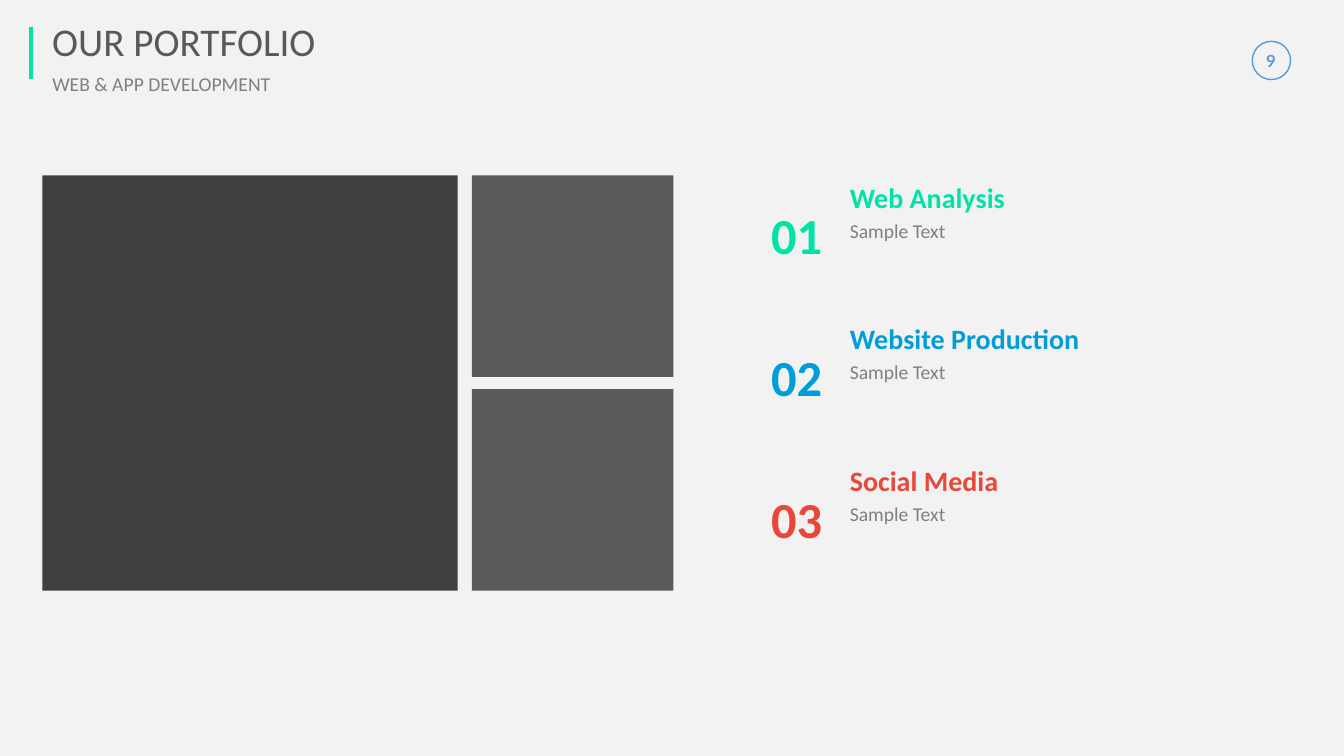
from pptx import Presentation
from pptx.dml.color import RGBColor
from pptx.enum.shapes import MSO_CONNECTOR, MSO_SHAPE
from pptx.enum.text import MSO_AUTO_SIZE, PP_ALIGN
from pptx.oxml.ns import qn
from pptx.util import Inches, Pt

RECT, OVAL = MSO_SHAPE.RECTANGLE, MSO_SHAPE.OVAL
LINE = MSO_CONNECTOR.STRAIGHT
GROW = MSO_AUTO_SIZE.SHAPE_TO_FIT_TEXT
LEFT, MID = PP_ALIGN.LEFT, PP_ALIGN.CENTER

MINT, BLUE, RED, SKY = "00E3A6", "009DD9", "E7483A", "5B9BD5"
PALE, GREY, SLATE, DARK = "F2F2F2", "808080", "595959", "404040"


def paint(code):
    return RGBColor.from_string(code)


class Deck:
    def __init__(self, font="Calibri"):
        self.font = font
        self.prs = Presentation()
        self.prs.slide_width = Inches(13.33)
        self.prs.slide_height = Inches(7.5)
        self.slide = self.prs.slides.add_slide(self.prs.slide_layouts[6])
        back = self.slide.background.fill
        back.solid()
        back.fore_color.rgb = paint(PALE)

    def shape(self, kind, box, fill=None, line=None, width=1):
        item = self.slide.shapes.add_shape(kind, *map(Inches, box))
        item.shadow.inherit = False
        if fill:
            item.fill.solid()
            item.fill.fore_color.rgb = paint(fill)
        else:
            item.fill.background()
        if line:
            item.line.color.rgb = paint(line)
            item.line.width = Pt(width)
        else:
            item.line.fill.background()

    def rule(self, start, end, color, width):
        item = self.slide.shapes.add_connector(
            LINE, *map(Inches, start + end))
        item.line.color.rgb = paint(color)
        item.line.width = Pt(width)
        props = item._element.spPr
        props.append(props.makeelement(qn("a:effectLst"), {}))

    def text(self, words, box, size, color, wrap=True, align=LEFT, **style):
        frame = self.slide.shapes.add_textbox(*map(Inches, box)).text_frame
        frame.word_wrap = wrap
        frame.auto_size = GROW
        para = frame.paragraphs[0]
        para.alignment = align
        run = para.add_run()
        run.text = words
        run.font.color.rgb = paint(color)
        look = {"name": self.font, "size": Pt(size), **style}
        for key, value in look.items():
            setattr(run.font, key, value)

    def service(self, top, number, title, width, color):
        """Add a large number with a heading and a line of text beside it."""
        bold = {"wrap": False, "bold": True}
        self.text(number, (7.55, top + 0.24, 0.71, 0.71), 36, color, **bold)
        self.text("Sample Text", (8.33, top + 0.38, 4.51, 0.34), 14, GREY)
        self.text(title, (8.33, top, width, 0.44), 20, color, **bold)


def main():
    deck = Deck()

    deck.shape(OVAL, (12.42, 0.41, 0.38, 0.38), line=SKY)
    deck.text("9", (12.41, 0.45, 0.39, 0.3), 12, SKY, wrap=False,
              align=MID, name="Lato", bold=True)

    deck.rule((0.31, 0.27), (0.31, 0.78), MINT, 2.5)
    deck.text("OUR PORTFOLIO", (0.42, 0.12, 8.8, 0.57), 28, SLATE)
    deck.text("WEB & APP DEVELOPMENT", (0.42, 0.66, 7.48, 0.34), 14, GREY)

    top, small, gap = 1.74, 2, 0.12
    large = 2 * small + gap
    deck.shape(RECT, (0.42, top, large, large), DARK)
    for row in range(2):
        deck.shape(RECT, (4.68, top + row * (small + gap), small, small),
                   SLATE)

    services = [("Web Analysis", 1.75, MINT),
                ("Website Production", 2.5, BLUE),
                ("Social Media", 1.69, RED)]
    pitch = 1.405
    for row, (title, width, color) in enumerate(services):
        deck.service(top + row * pitch, f"{row + 1:02}", title, width, color)

    deck.prs.save("out.pptx")


if __name__ == "__main__":
    main()
